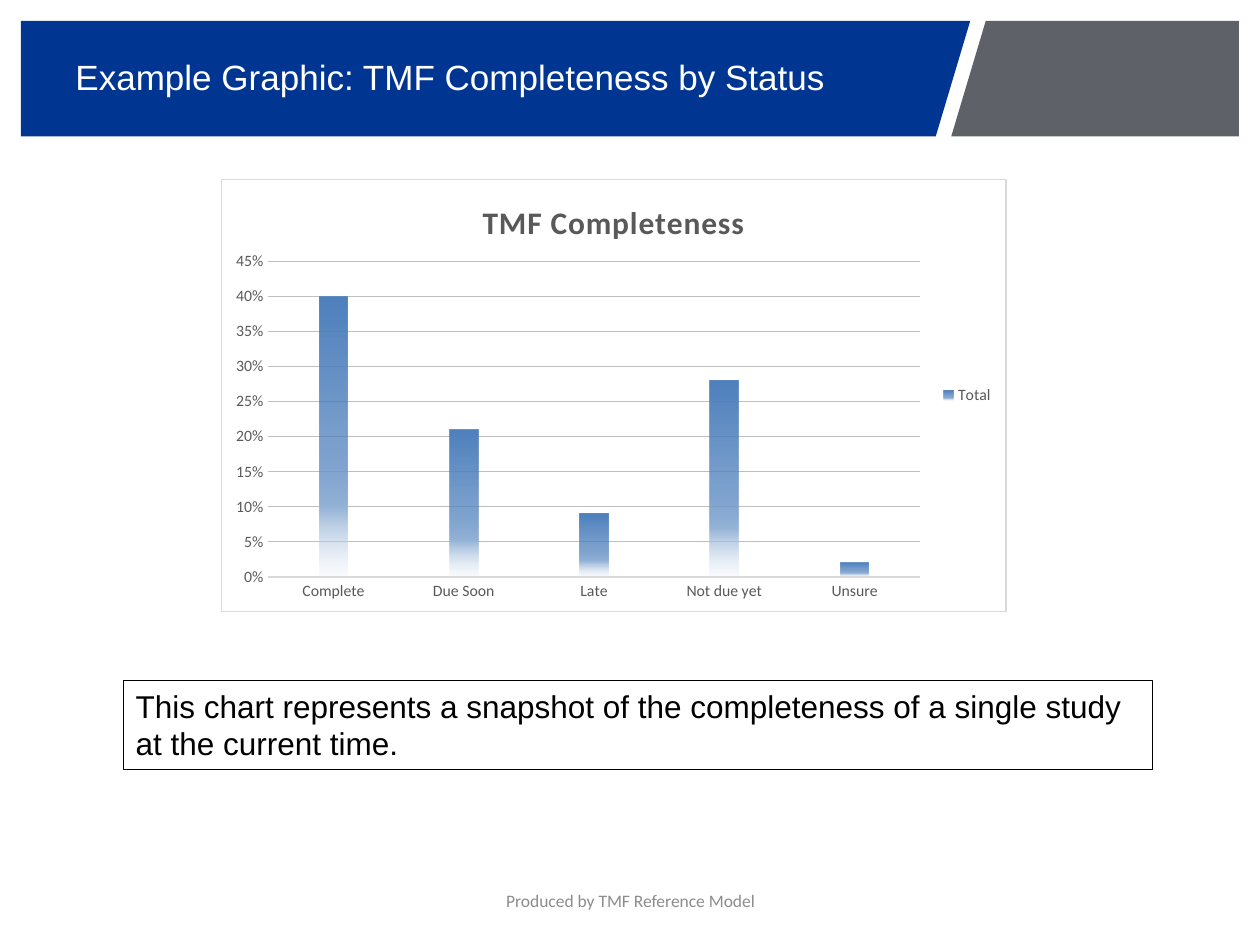
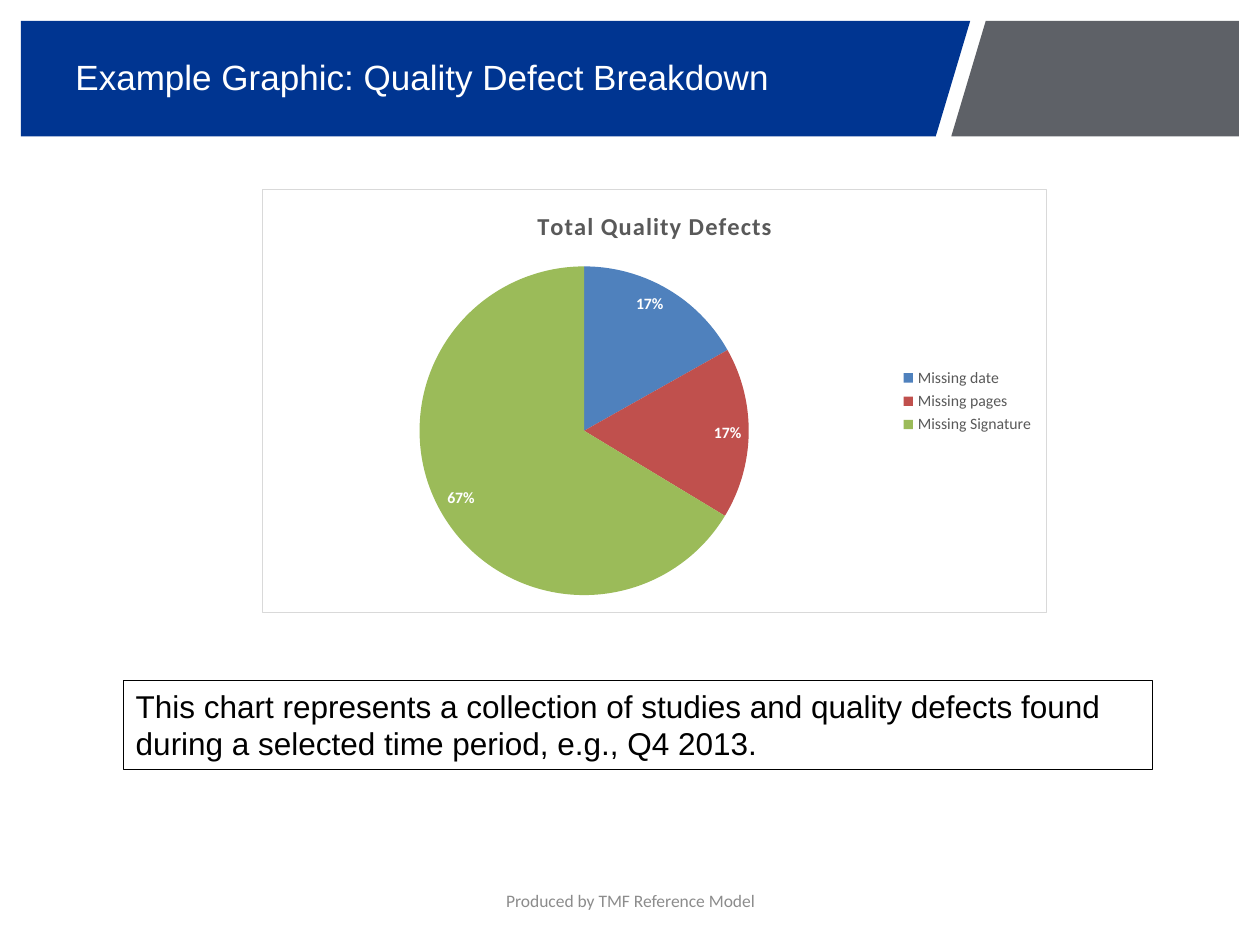
from pptx import Presentation
from pptx.chart.data import CategoryChartData
from pptx.dml.color import RGBColor
from pptx.enum.chart import XL_CHART_TYPE, XL_LABEL_POSITION, XL_LEGEND_POSITION, XL_TICK_MARK
from pptx.enum.shapes import MSO_SHAPE
from pptx.enum.text import MSO_ANCHOR, PP_ALIGN
from pptx.oxml import parse_xml
from pptx.oxml.ns import nsdecls, qn
from pptx.util import Pt

COLORS = {
    "blue": "003591", "slate": "5E6167", "white": "FFFFFF", "black": "000000",
    "footer": "8C8C8C", "label": "595959", "border": "D9D9D9", "grid": "BFBFBF",
    "bar": "4F81BD", "bar mid": "95B3D7", "bar low": "DCE6F2",
    "red": "C0504D", "green": "9BBB59",
}
BAND_TOP, BAND_END = 12, 78
BANDS = {
    "blue": [(12, BAND_TOP), (554.4, BAND_TOP), (534.7, BAND_END), (12, BAND_END)],
    "slate": [(563.3, BAND_TOP), (708, BAND_TOP), (708, BAND_END), (543.6, BAND_END)],
}
# Position in percent, colour and opacity in percent
BAR_STOPS = [(0, "bar", 100), (51, "bar", 75), (75, "bar mid", 100), (100, "bar low", 15)]


def color(name):
    return RGBColor.from_string(COLORS[name])


def style(font, size, name, face="Calibri", bold=False):
    font.size, font.name, font.bold = Pt(size), face, bold
    font.color.rgb = color(name)


def add_band(slide, name, points):
    pen = slide.shapes.build_freeform(*(Pt(v) for v in points[0]))
    pen.add_line_segments([(Pt(x), Pt(y)) for x, y in points[1:]])
    band = pen.convert_to_shape()
    band.shadow.inherit = False
    band.fill.solid()
    band.fill.fore_color.rgb = color(name)
    band.line.fill.background()


def fill_text(shape, text, size, name, face, align=PP_ALIGN.LEFT, anchor=MSO_ANCHOR.MIDDLE):
    frame = shape.text_frame
    frame.word_wrap = True
    frame.vertical_anchor = anchor
    frame.text = text
    para = frame.paragraphs[0]
    para.alignment = align
    style(para.runs[0].font, size, name, face)


def add_text(slide, box, *args, **kwargs):
    fill_text(slide.shapes.add_textbox(*map(Pt, box)), *args, **kwargs)


def add_note(slide, text):
    note = slide.shapes.add_shape(MSO_SHAPE.RECTANGLE, Pt(70.5), Pt(388.8), Pt(588.2), Pt(51))
    note.shadow.inherit = False
    note.fill.background()
    note.line.color.rgb = color("black")
    note.line.width = Pt(0.75)
    fill_text(note, text, 18, "black", "Arial", anchor=MSO_ANCHOR.TOP)


def add_frame(chart):
    """Give the whole chart a white fill and a thin border."""
    frame = parse_xml(
        f'<c:spPr {nsdecls("c", "a")}>'
        f'<a:solidFill><a:srgbClr val="{COLORS["white"]}"/></a:solidFill>'
        f'<a:ln w="{Pt(0.75)}"><a:solidFill><a:srgbClr val="{COLORS["border"]}"/>'
        '</a:solidFill></a:ln></c:spPr>')
    chart._chartSpace.find(qn("c:chart")).addnext(frame)


def place_plot(chart, plot):
    """Fix the inner plot area, given as shares of the chart's size."""
    area = chart._chartSpace.find(".//" + qn("c:plotArea"))
    for old in area.findall(qn("c:layout")):
        area.remove(old)
    sizes = "".join(f'<c:{key} val="{val}"/>' for key, val in zip("xywh", plot))
    area.insert(0, parse_xml(
        f'<c:layout {nsdecls("c")}><c:manualLayout><c:layoutTarget val="inner"/>'
        f'<c:xMode val="edge"/><c:yMode val="edge"/>{sizes}</c:manualLayout></c:layout>'))


def add_chart(slide, kind, box, plot, title, size, series, cats, vals):
    data = CategoryChartData(number_format="General")
    data.categories = cats
    data.add_series(series, vals)
    chart = slide.shapes.add_chart(kind, *map(Pt, box), data).chart
    style(chart.font, 10, "black")
    chart.has_title = True
    chart.chart_title.text_frame.text = title
    run = chart.chart_title.text_frame.paragraphs[0].runs[0]
    style(run.font, size, "label", bold=True)
    run._r.get_or_add_rPr().set("spc", "50")
    chart.has_legend = True
    chart.legend.position = XL_LEGEND_POSITION.RIGHT
    chart.legend.include_in_layout = False
    style(chart.legend.font, 9, "label")
    add_frame(chart)
    place_plot(chart, plot)
    return chart


def fade_bars(series):
    stops = "".join(
        f'<a:gs pos="{pos * 1000}"><a:srgbClr val="{COLORS[name]}">'
        f'<a:alpha val="{alpha * 1000}"/></a:srgbClr></a:gs>'
        for pos, name, alpha in BAR_STOPS)
    series._element.get_or_add_spPr().insert(0, parse_xml(
        f'<a:gradFill {nsdecls("a")}><a:gsLst>{stops}</a:gsLst>'
        '<a:lin ang="5400000" scaled="0"/></a:gradFill>'))


def style_bars(chart):
    bars = chart.plots[0]
    bars.gap_width, bars.overlap, bars.vary_by_categories = 355, -70, False
    fade_bars(bars.series[0])
    for axis in (chart.category_axis, chart.value_axis):
        axis.major_tick_mark = axis.minor_tick_mark = XL_TICK_MARK.NONE
        style(axis.tick_labels.font, 9, "label")
    line = chart.category_axis.format.line
    line.color.rgb, line.width = color("border"), Pt(0.75)
    axis = chart.value_axis
    axis.minimum_scale, axis.maximum_scale, axis.major_unit = 0, 0.45, 0.05
    axis.tick_labels.number_format = "0%"
    axis.tick_labels.number_format_is_linked = False
    axis.format.line.fill.background()
    grid = axis.major_gridlines.format.line
    grid.color.rgb, grid.width = color("grid"), Pt(0.75)


def style_pie(chart):
    pie = chart.plots[0]
    pie.vary_by_categories = True
    for i, name in enumerate(("bar", "red", "green")):
        fill = pie.series[0].points[i].format.fill
        fill.solid()
        fill.fore_color.rgb = color(name)
    labels = pie.series[0].data_labels
    labels.show_value = True
    labels.number_format = '0"%"'
    labels.number_format_is_linked = False
    labels.position = XL_LABEL_POSITION.INSIDE_END
    style(labels.font, 9, "white", bold=True)


def add_slide(deck, title, note):
    """Add a slide with bands, title, boxed note and footer."""
    slide = deck.slides.add_slide(deck.slide_layouts[6])
    for name, points in BANDS.items():
        add_band(slide, name, points)
    add_text(slide, (36, 21.6, 486, 44.6), title, 20, "white", "Arial")
    add_note(slide, note)
    add_text(slide, (246.2, 500.4, 228.2, 28.8), "Produced by TMF Reference Model",
             10, "footer", "Calibri", align=PP_ALIGN.CENTER)
    return slide


def main():
    deck = Presentation()
    deck.slide_width, deck.slide_height = Pt(720), Pt(540)

    slide = add_slide(
        deck, "Example Graphic: TMF Completeness by Status",
        "This chart represents a snapshot of the completeness of a single study "
        "at the current time.")
    style_bars(add_chart(
        slide, XL_CHART_TYPE.COLUMN_CLUSTERED, (126, 102.2, 449.3, 247.7),
        (0.06, 0.19, 0.83, 0.73), "TMF Completeness", 18, "Total",
        ["Complete", "Due Soon", "Late", "Not due yet", "Unsure"],
        [0.4, 0.21, 0.09, 0.28, 0.02]))

    slide = add_slide(
        deck, "Example Graphic: Quality Defect Breakdown",
        "This chart represents a collection of studies and quality defects found "
        "during a selected time period, e.g., Q4 2013.")
    style_pie(add_chart(
        slide, XL_CHART_TYPE.PIE, (149.8, 108, 448.6, 242.6),
        (0.2, 0.18, 0.42, 0.78), "Total Quality Defects", 14, "Series 1",
        ["Missing date", "Missing pages", "Missing Signature"], [17, 17, 67]))

    deck.save("out.pptx")


if __name__ == "__main__":
    main()
